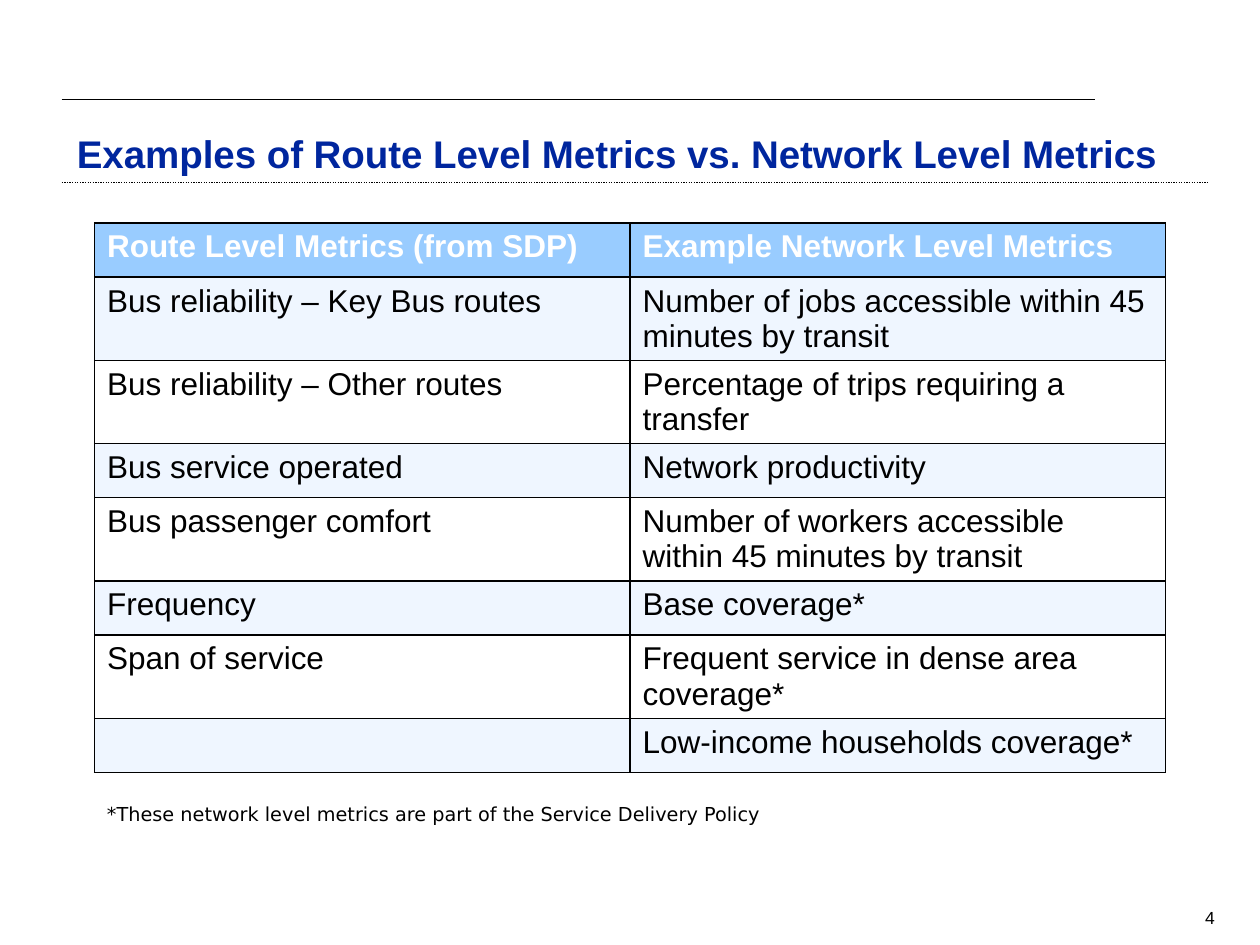
import pptx
import pptx.util
import pptx.dml.color
import pptx.enum.dml
import pptx.enum.shapes
import pptx.enum.text
import pptx.oxml
import pptx.oxml.ns
from pptx.util import Inches, Pt

ALIGN = pptx.enum.text.PP_ALIGN
ANCHOR = pptx.enum.text.MSO_ANCHOR
BLACK, WHITE, NAVY, SKY, PALE = "000000", "FFFFFF", "00269E", "99CCFF", "EFF6FF"
ROW_HEIGHT = 0.43
METRICS = [
    ("Route Level Metrics (from SDP)", "Example Network Level Metrics"),
    ("Bus reliability – Key Bus routes",
     "Number of jobs accessible within 45 minutes by transit"),
    ("Bus reliability – Other routes", "Percentage of trips requiring a transfer"),
    ("Bus service operated", "Network productivity"),
    ("Bus passenger comfort",
     "Number of workers accessible within 45 minutes by transit"),
    ("Frequency", "Base coverage*"),
    ("Span of service", "Frequent service in dense area coverage*"),
    ("", "Low-income households coverage*"),
]


def rgb(color):
    return pptx.dml.color.RGBColor.from_string(color)


def write(tf, text, size=18, color=BLACK, font="Arial", bold=False,
          align=ALIGN.LEFT, anchor=ANCHOR.TOP):
    tf.word_wrap = True
    tf.vertical_anchor = anchor
    p = tf.paragraphs[0]
    p.alignment = align
    if text:
        r = p.add_run()
        r.text = text
        r.font.size, r.font.name, r.font.bold = Pt(size), font, bold
        r.font.color.rgb = rgb(color)


def add_text(s, box, text, **fmt):
    tb = s.shapes.add_textbox(*map(Inches, box))
    write(tb.text_frame, text, **fmt)


def add_rule(s, left, right, y, width, dash=None):
    line = s.shapes.add_connector(pptx.enum.shapes.MSO_CONNECTOR.STRAIGHT,
                                  *map(Inches, (left, y, right, y)))
    line.line.color.rgb = rgb(BLACK)
    line.line.width = Pt(width)
    if dash:
        line.line.dash_style = dash
    line._element.spPr.append(pptx.oxml.parse_xml(
        "<a:effectLst %s/>" % pptx.oxml.ns.nsdecls("a")))


def add_heading(s, box, text):
    """Fill the title placeholder and rule it off above and below."""
    left, top, width, height = box
    title = s.shapes.title
    title.left, title.top, title.width, title.height = map(Inches, box)
    write(title.text_frame, text, size=22, color=NAVY, bold=True,
          anchor=ANCHOR.BOTTOM)
    add_rule(s, 0.49, 8.69, top - 0.15, 1)
    add_rule(s, 0.49, 9.59, top + height, 0.75,
             pptx.enum.dml.MSO_LINE.ROUND_DOT)


def outline_cell(cell, color=BLACK, width=1):
    """Put borders before the fill, as the cell schema requires."""
    tcPr = cell._tc.get_or_add_tcPr()
    for i, side in enumerate(("lnL", "lnR", "lnT", "lnB")):
        tcPr.insert(i, pptx.oxml.parse_xml(
            f'<a:{side} {pptx.oxml.ns.nsdecls("a")} w="{Pt(width)}">'
            f'<a:solidFill><a:srgbClr val="{color}"/></a:solidFill></a:{side}>'))


def add_metrics_table(s, left, top, width, rows):
    frame = s.shapes.add_table(len(rows), len(rows[0]), *map(
        Inches, (left, top, width, ROW_HEIGHT * len(rows))))
    for i, row in enumerate(rows):
        header = i == 0
        fill = SKY if header else PALE if i % 2 else WHITE
        for j, text in enumerate(row):
            cell = frame.table.cell(i, j)
            cell.fill.solid()
            cell.fill.fore_color.rgb = rgb(fill)
            outline_cell(cell)
            write(cell.text_frame, text, bold=header,
                  color=WHITE if header else BLACK)


def main():
    prs = pptx.Presentation()
    prs.slide_width, prs.slide_height = Inches(10), Inches(7.5)
    s = prs.slides.add_slide(prs.slide_layouts[5])
    add_heading(s, (0.51, 0.94, 9.49, 0.51),
                "Examples of Route Level Metrics vs. Network Level Metrics")
    add_metrics_table(s, 0.75, 1.77, 8.5, METRICS)
    add_text(s, (0.75, 6.32, 5.99, 0.29),
             "*These network level metrics are part of the Service Delivery Policy",
             size=11, font="DejaVu Sans")
    add_text(s, (8.91, 7.16, 0.83, 0.25), "4", size=10,
             align=ALIGN.RIGHT, anchor=ANCHOR.MIDDLE)
    prs.save("out.pptx")


if __name__ == "__main__":
    main()
